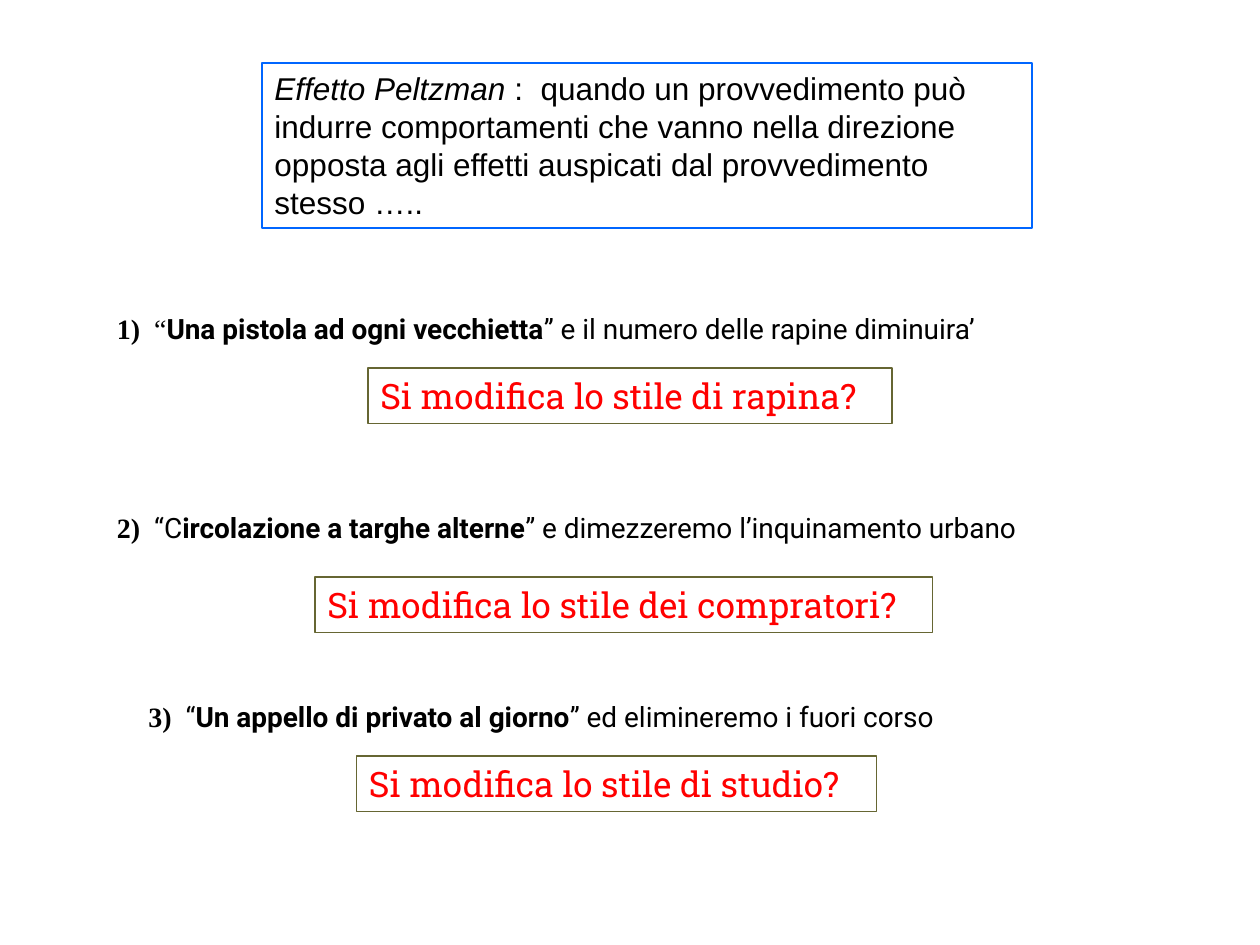
import pptx
import pptx.util
import pptx.dml.color
import pptx.enum.shapes
import pptx.enum.text

Inches = pptx.util.Inches
RGBColor = pptx.dml.color.RGBColor

BLACK = RGBColor(0x00, 0x00, 0x00)
RED = RGBColor(0xFF, 0x00, 0x00)
BLUE = RGBColor(0x00, 0x66, 0xFF)
OLIVE = RGBColor(0x66, 0x66, 0x33)

SERIF = "Times New Roman"
SANS = "Roboto"


def start_text(holder, size, color, font=None):
    frame = holder.text_frame
    frame.word_wrap = True
    frame.auto_size = pptx.enum.text.MSO_AUTO_SIZE.SHAPE_TO_FIT_TEXT
    frame.vertical_anchor = pptx.enum.text.MSO_ANCHOR.TOP
    paragraph = frame.paragraphs[0]
    paragraph.alignment = pptx.enum.text.PP_ALIGN.LEFT
    paragraph.font.size = pptx.util.Pt(size)
    paragraph.font.color.rgb = color
    if font:
        paragraph.font.name = font
    return paragraph


def add_run(paragraph, text, font=None, bold=None, italic=None):
    run = paragraph.add_run()
    run.text = text
    run.font.name = font
    run.font.bold = bold
    run.font.italic = italic


def add_frame(slide, left, top, width, height, outline, size, color, font):
    frame = slide.shapes.add_shape(
        pptx.enum.shapes.MSO_SHAPE.RECTANGLE,
        Inches(left), Inches(top), Inches(width), Inches(height))
    frame.shadow.inherit = False
    frame.fill.background()
    frame.line.color.rgb = outline
    frame.line.width = pptx.util.Pt(0.75)
    return start_text(frame, size, color, font)


def add_definition(slide):
    definition = add_frame(slide, 2.08, 0.5, 6.11, 1.31, BLUE, 18, BLACK, "Arial")
    add_run(definition, "Effetto Peltzman", italic=True)
    add_run(definition, " :  quando un provvedimento può indurre comportamenti "
            "che vanno nella direzione opposta agli effetti auspicati dal "
            "provvedimento stesso …..")


def add_example(slide, left, top, width, runs):
    example = slide.shapes.add_textbox(
        Inches(left), Inches(top), Inches(width), Inches(0.37))
    paragraph = start_text(example, 16, BLACK)
    for text, font, bold in runs:
        add_run(paragraph, text, font, bold)


def add_question(slide, left, top, width, text):
    question = add_frame(slide, left, top, width, 0.44, OLIVE, 20, RED, "Roboto Slab")
    add_run(question, text)


def main():
    deck = pptx.Presentation()
    deck.slide_width, deck.slide_height = Inches(10), Inches(7.5)
    slide = deck.slides.add_slide(deck.slide_layouts[6])

    add_definition(slide)

    add_example(slide, 0.83, 2.42, 8.36, [
        ("1)", SERIF, True),
        ("  “", SERIF, False),
        ("Una pistola ad ogni vecchietta", SANS, True),
        ("” e il numero delle rapine diminuira’", SANS, False)])
    add_example(slide, 0.83, 4, 8.62, [
        ("2)  ", SERIF, True),
        ("“C", SANS, False),
        ("ircolazione a targhe alterne", SANS, True),
        ("” e dimezzeremo l’inquinamento urbano", SANS, False)])
    add_example(slide, 1.08, 5.5, 7.64, [
        ("3)  ", SERIF, True),
        ("“", SANS, False),
        ("Un appello di privato al giorno", SANS, True),
        ("” ed elimineremo i fuori corso", SANS, False)])

    for left, top, width, topic in [
            (2.92, 2.92, 4.16, "di rapina"),
            (2.5, 4.58, 4.9, "dei compratori"),
            (2.83, 6, 4.13, "di studio")]:
        add_question(slide, left, top, width, f"Si modifica lo stile {topic}?")

    deck.save("out.pptx")


if __name__ == "__main__":
    main()
